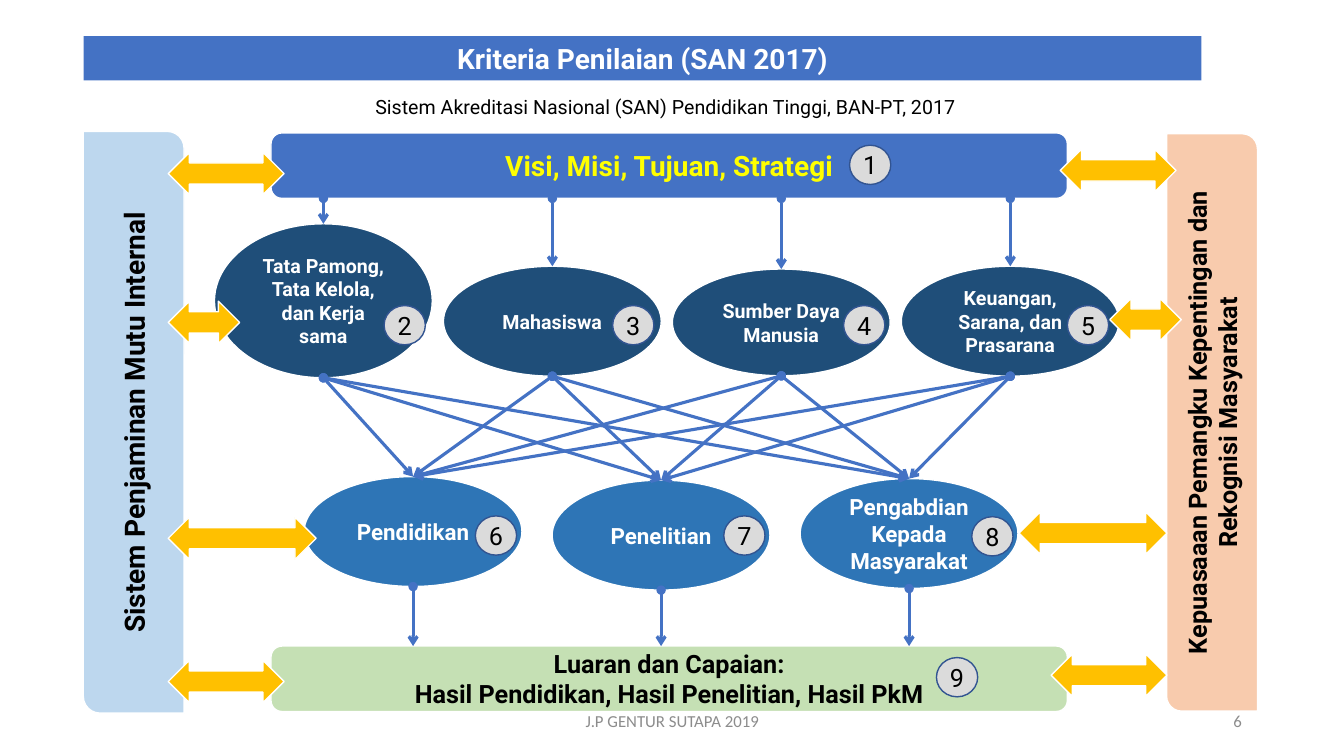
"""Build the slide on the SAN 2017 accreditation criteria."""
from lxml.etree import SubElement
from pptx import Presentation
from pptx.dml.color import RGBColor
from pptx.enum.shapes import MSO_CONNECTOR, MSO_SHAPE as Shape
from pptx.enum.text import MSO_ANCHOR, PP_ALIGN as Align
from pptx.oxml.ns import qn
from pptx.util import Cm, Pt

BLUE = RGBColor(0x44, 0x72, 0xC4)
NAVY = RGBColor(0x1F, 0x4E, 0x79)
MID_BLUE = RGBColor(0x2E, 0x75, 0xB6)
PALE_BLUE = RGBColor(0xBD, 0xD7, 0xEE)
PEACH = RGBColor(0xF8, 0xCB, 0xAD)
GREEN = RGBColor(0xC5, 0xE0, 0xB4)
GOLD = RGBColor(0xFF, 0xC0, 0x00)
YELLOW = RGBColor(0xFF, 0xFF, 0x00)
BADGE_FILL = RGBColor(0xDB, 0xDB, 0xDB)
BADGE_LINE = RGBColor(0x32, 0x54, 0x91)
GRAY = RGBColor(0x8C, 0x8C, 0x8C)
BLACK = RGBColor(0, 0, 0)
WHITE = RGBColor(0xFF, 0xFF, 0xFF)

TITLE = "Kriteria Penilaian (SAN 2017)"
CAPTIONS = [
    ("Sistem Akreditasi Nasional (SAN) Pendidikan Tinggi, BAN-PT, 2017",
     (6.83, 2.26, 19.89, 0.86), 14, "Roboto", BLACK, Align.CENTER),
    ("J.P GENTUR SUTAPA 2019", (11.23, 17.65, 11.43, 1.02), 12, "Calibri", GRAY, Align.CENTER),
    ("6", (23.93, 17.65, 7.62, 1.02), 12, "Calibri", GRAY, Align.RIGHT),
]
BAR_LEFT, BAR_WIDTH, BAR_HEIGHT = 6.83, 20.07, 1.65
VISION_TOP, OUTPUT_TOP = 3.35, 16.28
BARS = [
    ("Visi, Misi, Tujuan, Strategi", VISION_TOP, BLUE, 20, YELLOW),
    ("Luaran dan Capaian:\nHasil Pendidikan, Hasil Penelitian, Hasil PkM", OUTPUT_TOP, GREEN, 18, BLACK),
]
PANELS = [
    ("Sistem Penjaminan Mutu Internal", (-3.96, 9.37, 14.66, 2.54), PALE_BLUE, 20),
    ("Kepuasaaan Pemangku Kepentingan dan Rekognisi Masyarakat", (23.27, 9.5, 14.55, 2.29), PEACH, 18),
]
OVAL_WIDTH = 5.49
INPUTS = [
    ("Tata Pamong, Tata Kelola, dan Kerja sama", 5.64, 3.88),
    ("Mahasiswa", 6.71, 2.77),
    ("Sumber Daya Manusia", 6.78, 2.69),
    ("Keuangan, Sarana, dan Prasarana", 6.71, 2.77),
]
ACTIVITIES = [
    ("Pendidikan", 12.01, 2.77),
    ("Penelitian", 12.1, 2.77),
    ("Pengabdian Kepada Masyarakat", 12.06, 2.77),
]
BADGES = [
    (21.41, 3.66), (9.68, 7.7), (15.44, 7.7), (21.26, 7.7), (26.9, 7.7),
    (11.98, 13), (18.24, 13), (24.49, 13.02), (23.6, 16.57),
]
ARROW_HEIGHT = 1.07
ARROWS = [
    (4.24, 7.59, 1.8), (4.24, 3.84, 2.92), (4.24, 13.03, 3.73), (4.24, 16.64, 2.92),
    (27.97, 7.52, 1.8), (26.72, 3.76, 2.92), (25.68, 12.9, 3.73), (26.49, 16.48, 2.92),
]


def write(shape, text, size, color, name="Roboto", bold=True, align=Align.CENTER):
    frame = shape.text_frame
    frame.text = text
    frame.word_wrap = True
    frame.vertical_anchor = MSO_ANCHOR.MIDDLE
    for paragraph in frame.paragraphs:
        paragraph.alignment = align
        font = paragraph.font
        font.name, font.size, font.bold = name, Pt(size), bold
        font.color.rgb = color


def add_block(slide, kind, box, fill, line=WHITE):
    shape = slide.shapes.add_shape(kind, *map(Cm, box))
    shape.shadow.inherit = False
    shape.fill.solid()
    shape.fill.fore_color.rgb = fill
    if line is None:
        shape.line.fill.background()
    else:
        shape.line.color.rgb = line
        shape.line.width = Pt(1)
    return shape


def add_ovals(slide, items, first_center, step, fill, size):
    ovals = []
    for index, (text, top, height) in enumerate(items):
        left = first_center + index * step - OVAL_WIDTH / 2
        oval = add_block(slide, Shape.OVAL, (left, top, OVAL_WIDTH, height), fill)
        write(oval, text, size, WHITE)
        ovals.append(oval)
    return ovals


def center_x(shape):
    return shape.left + shape.width // 2


def add_link(slide, start, end, target=None):
    link = slide.shapes.add_connector(MSO_CONNECTOR.STRAIGHT, *start, *end)
    if target is not None:
        link.end_connect(target, 0)
    link.line.color.rgb = BLUE
    link.line.width = Pt(2.25)
    outline = link.line._get_or_add_ln()
    SubElement(outline, qn("a:headEnd"), type="oval")
    SubElement(outline, qn("a:tailEnd"), type="arrow")
    SubElement(link._element.spPr, qn("a:effectLst"))


def main():
    presentation = Presentation()
    presentation.slide_width, presentation.slide_height = Cm(33.87), Cm(19.05)
    slide = presentation.slides.add_slide(presentation.slide_layouts[6])

    title = add_block(slide, Shape.RECTANGLE, (2.11, 0.91, 28.17, 1.12), BLUE, None)
    write(title, TITLE, 20, WHITE)
    for text, box, size, name, color, align in CAPTIONS:
        caption = slide.shapes.add_textbox(*map(Cm, box))
        write(caption, text, size, color, name, False, align)

    for text, top, fill, size, color in BARS:
        bar = add_block(slide, Shape.ROUNDED_RECTANGLE, (BAR_LEFT, top, BAR_WIDTH, BAR_HEIGHT), fill)
        write(bar, text, size, color)
    inputs = add_ovals(slide, INPUTS, 8.15, 5.77, NAVY, 14)
    activities = add_ovals(slide, ACTIVITIES, 10.41, 6.25, MID_BLUE, 16)
    for text, box, fill, size in PANELS:
        panel = add_block(slide, Shape.ROUND_2_DIAG_RECTANGLE, box, fill)
        panel.rotation = 270
        write(panel, text, size, BLACK)

    for number, (left, top) in enumerate(BADGES, 1):
        badge = add_block(slide, Shape.OVAL, (left, top, 1.04, 0.99), BADGE_FILL, BADGE_LINE)
        write(badge, str(number), 18, BLACK, bold=False)
        frame = badge.text_frame
        frame.margin_left = frame.margin_right = frame.margin_top = frame.margin_bottom = 0

    for source in inputs:
        x = center_x(source)
        add_link(slide, (x, Cm(VISION_TOP + BAR_HEIGHT)), (x, source.top), source)
        for target in activities:
            start = (x, source.top + source.height)
            add_link(slide, start, (center_x(target), target.top), target)
    for source in activities:
        x = center_x(source)
        add_link(slide, (x, source.top + source.height), (x, Cm(OUTPUT_TOP)))

    for left, top, width in ARROWS:
        add_block(slide, Shape.LEFT_RIGHT_ARROW, (left, top, width, ARROW_HEIGHT), GOLD)

    presentation.save("out.pptx")


if __name__ == "__main__":
    main()
